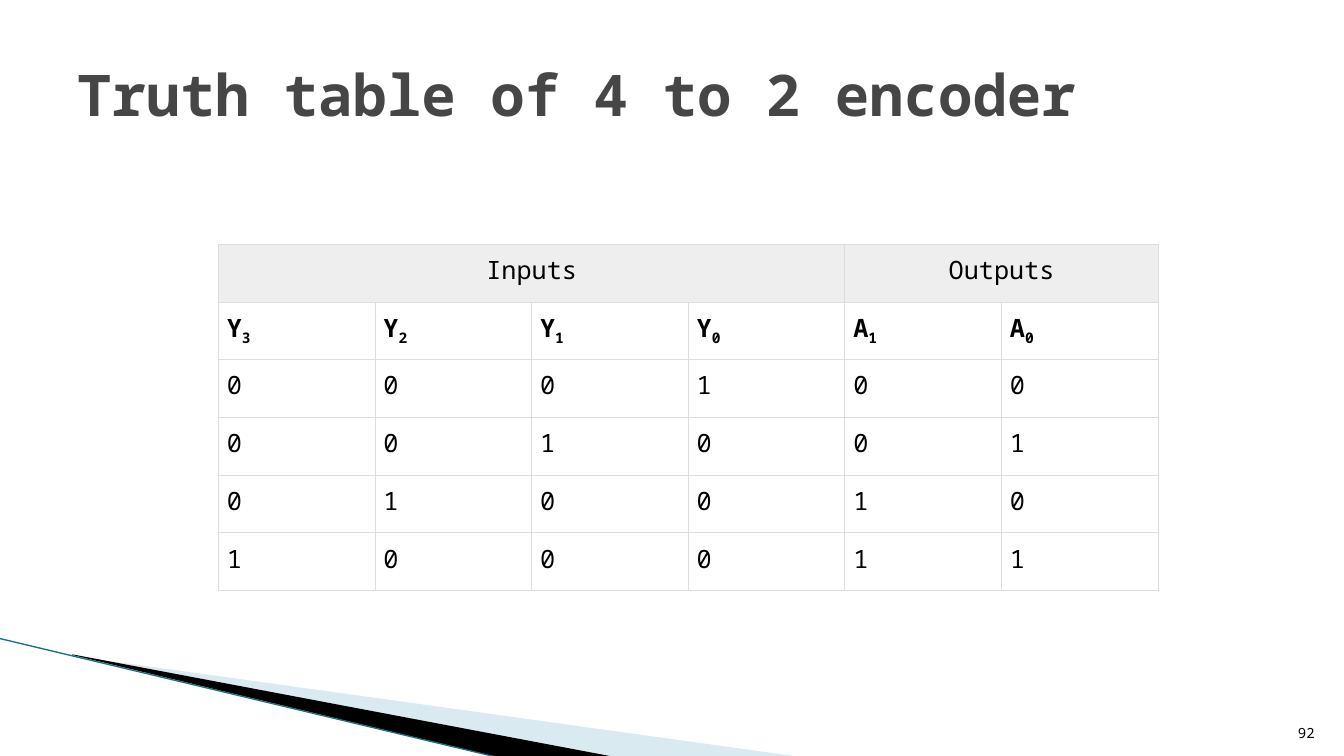
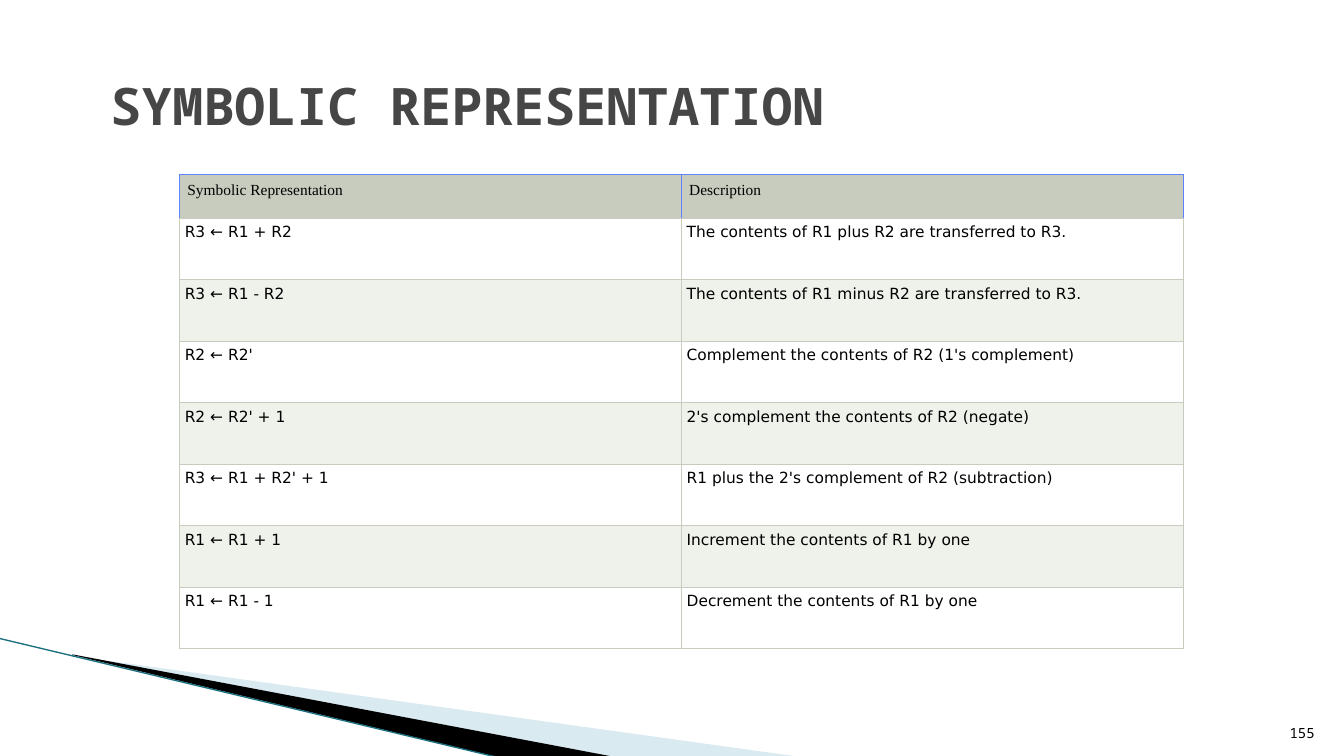
import pptx
import pptx.dml.color
import pptx.enum.shapes
import pptx.enum.text
import pptx.oxml
import pptx.oxml.ns
import pptx.util
from lxml import etree

RGB = pptx.dml.color.RGBColor
ALIGN = pptx.enum.text.PP_ALIGN
ANCHOR = pptx.enum.text.MSO_ANCHOR
qn = pptx.oxml.ns.qn

# Colours and fonts
BLACK = RGB(0x00, 0x00, 0x00)
WHITE = RGB(0xFF, 0xFF, 0xFF)
SLATE = RGB(0x46, 0x46, 0x46)
SKY = RGB(0xA0, 0xCB, 0xDC)
TEAL = RGB(0x1A, 0x70, 0x80)
SILVER = RGB(0xDD, 0xDD, 0xDD)
PALE = RGB(0xEE, 0xEE, 0xEE)
SAGE = RGB(0xC7, 0xCC, 0xBE)
MIST = RGB(0xEF, 0xF1, 0xEB)
BLUE = RGB(0x60, 0x82, 0xFC)
MONO, SANS, SERIF = "Noto Sans Mono", "DejaVu Sans", "Times New Roman"

# The slide is a grid of 160 columns by 90 rows of square units
COLS, ROWS = 160, 90
WIDE, HIGH = pptx.util.Inches(13.33), pptx.util.Inches(7.5)


def across(cols):
    return round(WIDE * cols / COLS)


def down(rows):
    return round(HIGH * rows / ROWS)


def write(frame, text, size=18, font=MONO, color=BLACK, bold=False,
          align=ALIGN.LEFT):
    """Fill a text frame; the part after an underscore is a subscript."""
    para = frame.paragraphs[0]
    para.alignment = align
    for low, part in enumerate(text.split("_")):
        run = para.add_run()
        run.text = part
        run.font.size = pptx.util.Pt(size)
        run.font.name = font
        run.font.color.rgb = color
        run.font.bold = bold
        if low:
            run.font._element.set("baseline", "-25000")


def edge(cell, side, color):
    """Draw one side (L, R, T or B) of a table cell."""
    props = cell._tc.get_or_add_tcPr()
    line = etree.SubElement(props, qn("a:ln" + side),
                            w=str(pptx.util.Pt(0.75)))
    fill = etree.SubElement(line, qn("a:solidFill"))
    etree.SubElement(fill, qn("a:srgbClr"), val=str(color))


def reframe(shape, spot):
    """Give a freeform a new frame while its outline stays in place."""
    x, y, w, h = spot
    left, top, width, height = across(x), down(y), across(w), down(h)
    outline = shape._element.spPr.find(".//" + qn("a:path"))
    for dot in outline.iter(qn("a:pt")):
        dot.set("x", str(int(dot.get("x")) + shape.left - left))
        dot.set("y", str(int(dot.get("y")) + shape.top - top))
    outline.set("w", str(width))
    outline.set("h", str(height))
    shape.left, shape.top = left, top
    shape.width, shape.height = width, height


class Deck:
    """The shared style and the current slide."""

    def __init__(self):
        self.prs = pptx.Presentation()
        self.prs.slide_width, self.prs.slide_height = WIDE, HIGH
        self.shapes = None

    def slide(self, title, spot, size, number):
        page = self.prs.slides.add_slide(self.prs.slide_layouts[6])
        self.shapes = page.shapes
        # Corner sweep
        self.wedge([(8.8, 78.1), (95.2, 90.1), (73, 90.1), (8.8, 78)],
                   (12.5, 65.65, 66.5, 18.95), SKY, 40)
        self.wedge([(8.6, 77.9), (73.1, 90.1), (59.5, 90.2), (8.7, 78)],
                   (-1, 76, 66.5, 11), BLACK)
        self.line((-0.1, 76), (59.4, 90.2), TEAL, 0.95)
        # Title and slide number
        self.text(title, spot, ANCHOR.MIDDLE, size=size, color=SLATE,
                  bold=True)
        self.text(number, (151.3, 84.1, 6.4, 4.8), ANCHOR.BOTTOM, size=10,
                  align=ALIGN.RIGHT)

    def wedge(self, points, spot, color, alpha=100):
        dots = [(across(x), down(y)) for x, y in points]
        path = self.shapes.build_freeform(*dots[0], scale=1.0)
        path.add_line_segments(dots[1:], close=True)
        shape = path.convert_to_shape()
        reframe(shape, spot)
        shape.shadow.inherit = False
        shape.fill.solid()
        shape.fill.fore_color.rgb = color
        shape.line.fill.background()
        if alpha < 100:
            tint = shape._element.spPr.find(".//" + qn("a:srgbClr"))
            etree.SubElement(tint, qn("a:alpha"), val=str(alpha * 1000))

    def line(self, start, end, color, width):
        line = self.shapes.add_connector(
            pptx.enum.shapes.MSO_CONNECTOR.STRAIGHT,
            across(start[0]), down(start[1]), across(end[0]), down(end[1]))
        line.line.color.rgb = color
        line.line.width = pptx.util.Pt(width)
        etree.SubElement(line._element.spPr, qn("a:effectLst"))

    def text(self, text, spot, anchor, **style):
        x, y, w, h = spot
        frame = self.shapes.add_textbox(
            across(x), down(y), across(w), down(h)).text_frame
        frame.word_wrap = True
        frame.vertical_anchor = anchor
        write(frame, text, **style)

    def table(self, spot, heights, rows, look):
        """Place a table; look(row) gives fill, inset, edges and text style."""
        x, y, w = spot
        count = len(rows[0])
        table = self.shapes.add_table(
            len(rows), count, across(x), down(y), across(w),
            down(sum(heights))).table
        table.first_row = table.horz_banding = False
        for col in table.columns:
            col.width = across(w / count)
        for r, (height, row) in enumerate(zip(heights, rows)):
            table.rows[r].height = down(height)
            fill, inset, edges, style = look(r)
            for c, text in enumerate(row):
                cell = table.cell(r, c)
                for side, color in zip("LRTB", edges):
                    edge(cell, side, color)
                if fill is None:
                    cell.fill.background()
                else:
                    cell.fill.solid()
                    cell.fill.fore_color.rgb = fill
                cell.margin_left = cell.margin_right = across(inset)
                cell.margin_top = cell.margin_bottom = down(inset)
                if text:
                    write(cell.text_frame, text, **style)
        return table


def truth(row):
    style = {"bold": row == 1}
    if row == 0:
        style["align"] = ALIGN.CENTER
    return PALE if row == 0 else None, 1, [SILVER] * 4, style


def symbol(row):
    if row == 0:
        return SAGE, 0.9, [BLUE] * 3 + [SAGE], {"size": 11, "font": SERIF}
    fill = WHITE if row % 2 else MIST
    return fill, 0.6, [SAGE] * 4, {"size": 11, "font": SANS}


def main():
    deck = Deck()

    # Truth table
    deck.slide("Truth table of 4 to 2 encoder", (8, 3.6, 144, 15), 41, "92")
    rows = [
        ["Inputs", "", "", "", "Outputs", ""],
        ["Y_3", "Y_2", "Y_1", "Y_0", "A_1", "A_0"],
        *map(list, ("000100", "001001", "010010", "100011")),
    ]
    table = deck.table((26, 29.08, 111.9), [6.87] * len(rows), rows, truth)
    for first, last in ((0, 3), (4, 5)):
        table.cell(0, first).merge(table.cell(0, last))

    # Register transfers
    deck.slide("SYMBOLIC REPRESENTATION", (11.95, 8.15, 136, 8.75), 36.9,
               "155")
    rows = [
        ("Symbolic Representation", "Description"),
        ("R3 ← R1 + R2", "The contents of R1 plus R2 are transferred to R3."),
        ("R3 ← R1 - R2", "The contents of R1 minus R2 are transferred to R3."),
        ("R2 ← R2'", "Complement the contents of R2 (1's complement)"),
        ("R2 ← R2' + 1", "2's complement the contents of R2 (negate)"),
        ("R3 ← R1 + R2' + 1", "R1 plus the 2's complement of R2 (subtraction)"),
        ("R1 ← R1 + 1", "Increment the contents of R1 by one"),
        ("R1 ← R1 - 1", "Decrement the contents of R1 by one"),
    ]
    deck.table((21.4, 20.75, 119.5), [5.25] + [7.32] * 7, rows, symbol)

    deck.prs.save("out.pptx")


if __name__ == "__main__":
    main()
